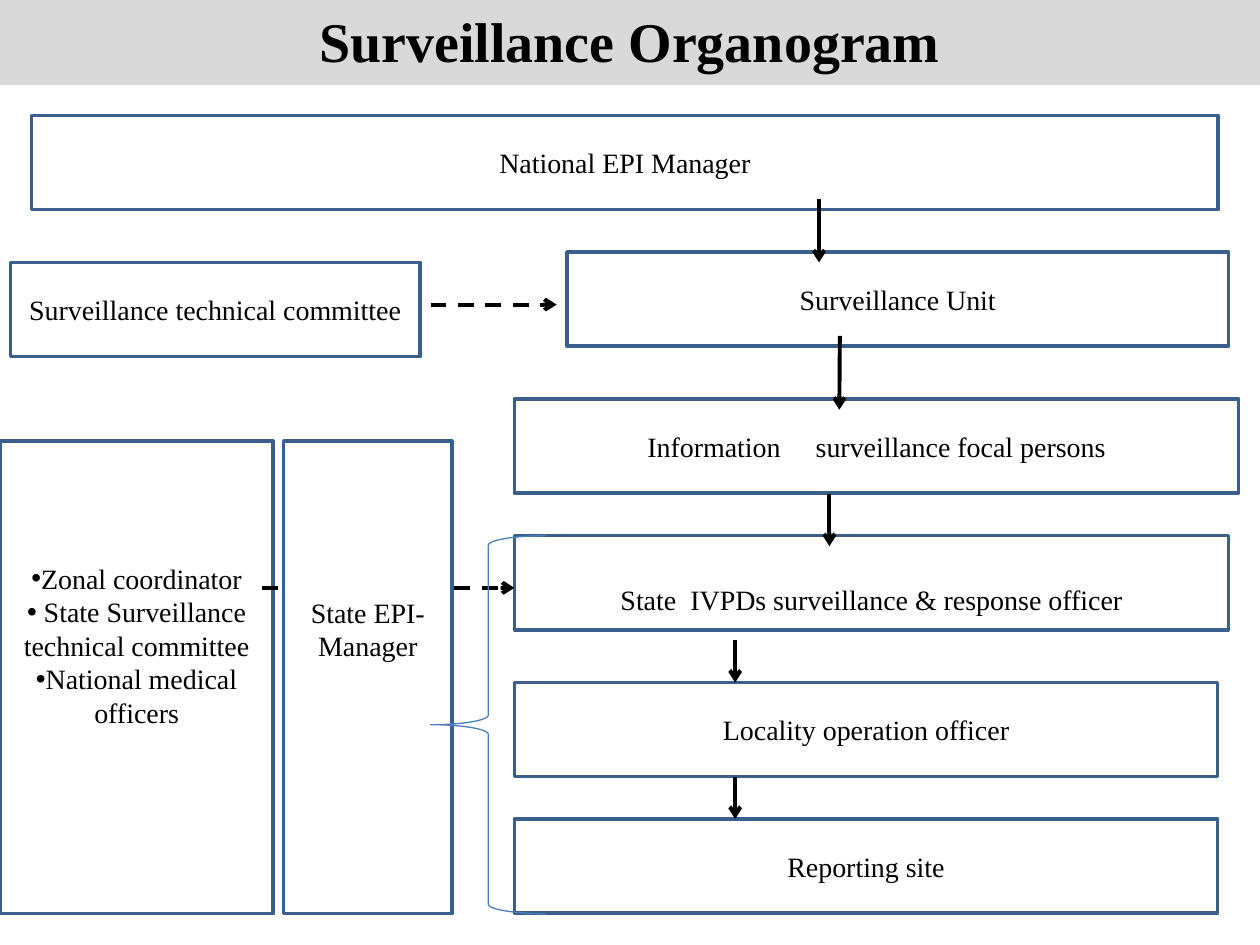
from dataclasses import dataclass

from lxml import etree
from pptx import Presentation
from pptx.dml.color import RGBColor
from pptx.enum import dml, shapes, text
from pptx.oxml.ns import qn
from pptx.util import Cm, Pt

COLOURS = {
    "banner": "D9D9D9",
    "paper": "FFFFFF",
    "border": "3A5F8C",
    "brace": "4B7EBC",
    "ink": "000000",
}
FONT = "Times New Roman"
ROW_HEIGHT = 1.9
COLUMN_TOP, COLUMN_HEIGHT = 8.89, 9.53
INSET = 0.13
BLANK_LINE = 0.65


@dataclass(frozen=True)
class Box:
    left: float
    top: float
    width: float
    lines: tuple[str, ...]
    height: float = ROW_HEIGHT
    inset_top: float = INSET
    inset_bottom: float = INSET
    bullets: bool = False
    gap: int = 0
    size: int = 16
    bold: bool = False
    fill: str = "paper"
    line: str = "border"
    line_width: float = 2
    grow: bool = False


@dataclass(frozen=True)
class Arrow:
    start: tuple[float, float]
    end: tuple[float, float]
    dashed: bool = False


TITLE = Box(0, 0, 25.4, ("Surveillance Organogram",), height=1.63,
            inset_top=0.42, inset_bottom=0.42, size=32, bold=True,
            fill="banner", line="banner", line_width=4.5, grow=True)
BOXES = (
    Box(0.64, 2.33, 23.92, ("National EPI Manager",)),
    Box(11.43, 5.08, 13.34, ("Surveillance Unit",)),
    Box(10.37, 8.04, 14.6, ("Information|surveillance focal persons",), gap=16),
    Box(0.21, 5.29, 8.26, ("Surveillance technical committee",)),
    Box(10.37, 10.8, 14.4, ("State|IVPDs surveillance & response officer",),
        inset_top=INSET + BLANK_LINE, gap=4),
    Box(10.37, 13.76, 14.18, ("Locality operation officer",)),
    Box(10.37, 16.51, 14.18, ("Reporting site",)),
    Box(0, COLUMN_TOP, 5.51,
        ("Zonal coordinator", " State Surveillance technical committee",
         "National medical officers"),
        height=COLUMN_HEIGHT, inset_top=INSET + BLANK_LINE,
        inset_bottom=INSET + 3 * BLANK_LINE, bullets=True),
)
STATE_MANAGER = Box(5.72, COLUMN_TOP, 3.39, ("State EPI-Manager",),
                    height=COLUMN_HEIGHT,
                    inset_bottom=INSET + 3 * BLANK_LINE)
ARROWS = (
    Arrow((16.51, 4.02), (16.51, 5.29)),
    Arrow((16.93, 6.77), (16.92, 8.26)),
    Arrow((16.72, 9.95), (16.72, 11.01)),
    Arrow((14.82, 12.91), (14.82, 13.76)),
    Arrow((14.82, 15.66), (14.82, 16.51)),
    Arrow((8.68, 6.14), (11.22, 6.14), dashed=True),
    Arrow((5.29, 11.85), (10.37, 11.85), dashed=True),
)


def apply(target, values: dict) -> None:
    for name, value in values.items():
        setattr(target, name, value)


def colour(name: str) -> RGBColor:
    return RGBColor.from_string(COLOURS[name])


def add_span(para, words: str, box: Box):
    span = para.add_run()
    span.text = words
    apply(span.font, {"name": FONT, "size": Pt(box.size), "bold": box.bold})
    span.font.color.rgb = colour("ink")
    return span


def add_line(para, line: str, box: Box) -> None:
    para.alignment = text.PP_ALIGN.CENTER
    for index, words in enumerate(line.split("|")):
        if index:
            space = add_span(para, " ", box)
            space.font._element.set("spc", str(box.gap * 100))
        add_span(para, words, box)
    if box.bullets:
        properties = para._p.get_or_add_pPr()
        apply_indent = {"marL": "0", "indent": "0"}
        for name, value in apply_indent.items():
            properties.set(name, value)
        etree.SubElement(properties, qn("a:buFont")).set("typeface", "Arial")
        etree.SubElement(properties, qn("a:buChar")).set("char", "•")


def draw_box(page, box: Box) -> None:
    shape = page.shapes.add_shape(
        shapes.MSO_SHAPE.RECTANGLE,
        Cm(box.left), Cm(box.top), Cm(box.width), Cm(box.height))
    shape.shadow.inherit = False
    shape.fill.solid()
    shape.fill.fore_color.rgb = colour(box.fill)
    shape.line.color.rgb = colour(box.line)
    shape.line.width = Pt(box.line_width)
    frame = shape.text_frame
    fit = text.MSO_AUTO_SIZE
    apply(frame, {
        "word_wrap": True,
        "vertical_anchor": text.MSO_ANCHOR.MIDDLE,
        "margin_top": Cm(box.inset_top),
        "margin_bottom": Cm(box.inset_bottom),
        "auto_size": fit.SHAPE_TO_FIT_TEXT if box.grow else fit.NONE,
    })
    for index, line in enumerate(box.lines):
        para = frame.add_paragraph() if index else frame.paragraphs[0]
        add_line(para, line, box)


def draw_arrow(page, arrow: Arrow) -> None:
    connector = page.shapes.add_connector(
        shapes.MSO_CONNECTOR.STRAIGHT,
        *(Cm(value) for value in arrow.start + arrow.end))
    connector.line.color.rgb = colour("ink")
    connector.line.width = Pt(2.25)
    if arrow.dashed:
        connector.line.dash_style = dml.MSO_LINE.DASH
    outline = connector.line._get_or_add_ln()
    etree.SubElement(outline, qn("a:tailEnd")).set("type", "arrow")
    etree.SubElement(connector._element.spPr, qn("a:effectLst"))


def draw_brace(page) -> None:
    brace = page.shapes.add_shape(
        shapes.MSO_SHAPE.LEFT_BRACE, Cm(8.68), Cm(10.8), Cm(2.33), Cm(7.62))
    brace.shadow.inherit = False
    brace.fill.background()
    brace.line.color.rgb = colour("brace")
    brace.line.width = Pt(0.75)


def main() -> None:
    deck = Presentation()
    apply(deck, {"slide_width": Cm(25.4), "slide_height": Cm(19.05)})
    page = deck.slides.add_slide(deck.slide_layouts[6])
    for box in (TITLE, *BOXES):
        draw_box(page, box)
    for arrow in ARROWS:
        draw_arrow(page, arrow)
    draw_box(page, STATE_MANAGER)
    draw_brace(page)
    deck.save("out.pptx")


if __name__ == "__main__":
    main()
